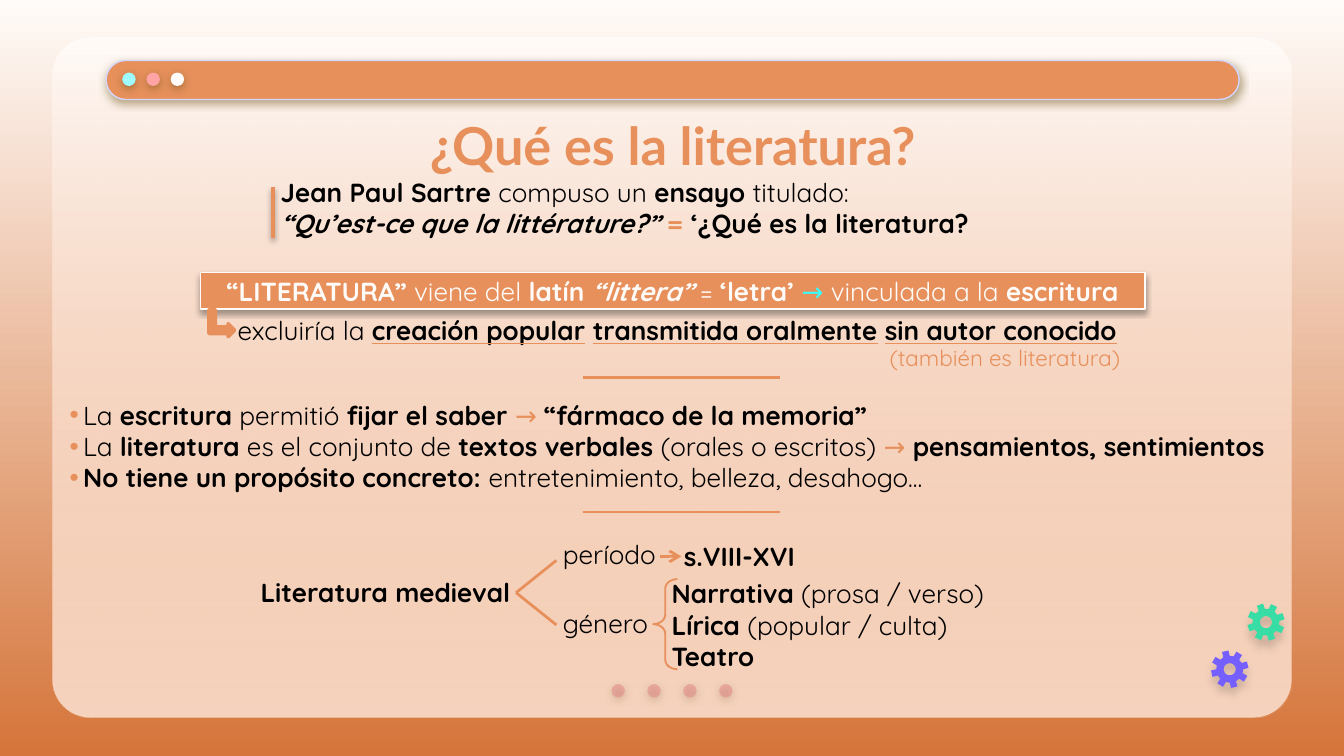
import math

import pptx
import pptx.dml.color
import pptx.enum.shapes
import pptx.enum.text
import pptx.oxml
import pptx.oxml.ns
import pptx.util
from pptx.util import Inches

COLORS = {
    "cream": "FFFBF8", "orange": "E7905C", "rust": "D5753B", "rose": "E27B83",
    "lilac": "D2D6FF", "aqua": "A0FDFD", "pink": "FFA4A4", "cyan": "3BFBFB",
    "green": "37DDA5", "violet": "755FFF", "black": "000000", "brown": "6D5416",
}
RGB = {name: pptx.dml.color.RGBColor.from_string(code) for name, code in COLORS.items()}
NS = 'xmlns:a="http://schemas.openxmlformats.org/drawingml/2006/main"'
SHAPE = pptx.enum.shapes.MSO_SHAPE
STRAIGHT = pptx.enum.shapes.MSO_CONNECTOR.STRAIGHT
MIDDLE = pptx.enum.text.MSO_ANCHOR.MIDDLE
FIT = pptx.enum.text.MSO_AUTO_SIZE.SHAPE_TO_FIT_TEXT
CENTER = pptx.enum.text.PP_ALIGN.CENTER
SOFT = ("brown", 50, 4.5, 1.5)


def style(item, fill=None, line=None, width=0.75, shadow=None):
    if fill:
        item.fill.solid()
        item.fill.fore_color.rgb = RGB[fill]
    elif hasattr(item, "fill"):
        item.fill.background()
    if line:
        item.line.color.rgb = RGB[line]
        item.line.width = pptx.util.Pt(width)
    else:
        item.line.fill.background()
    outer = ""
    if shadow:
        color, alpha, blur, distance = shadow
        outer = (
            f'<a:outerShdw blurRad="{pptx.util.Pt(blur)}" dist="{pptx.util.Pt(distance)}" dir="5400000" '
            f'algn="bl" rotWithShape="0"><a:srgbClr val="{COLORS[color]}">'
            f'<a:alpha val="{alpha * 1000}"/></a:srgbClr></a:outerShdw>'
        )
    item._element.spPr.append(pptx.oxml.parse_xml(f"<a:effectLst {NS}>{outer}</a:effectLst>"))
    return item


def write(frame, lines, color="black", size=14, family="Quicksand", align=None, bullets=False):
    for number, runs in enumerate(lines):
        paragraph = frame.paragraphs[0] if number == 0 else frame.add_paragraph()
        paragraph.alignment = align
        if bullets:
            properties = paragraph._p.get_or_add_pPr()
            properties.set("marL", str(Inches(0.1)))
            properties.set("indent", str(-Inches(0.1)))
            for mark in (f'<a:buClr {NS}><a:srgbClr val="{COLORS["orange"]}"/></a:buClr>',
                         f'<a:buFont {NS} typeface="Arial"/>', f'<a:buChar {NS} char="•"/>'):
                properties.append(pptx.oxml.parse_xml(mark))
        for words, flags, *accent in runs:
            if words == "\n":
                paragraph.add_line_break()
                paragraph._p[-1].append(pptx.oxml.parse_xml(f'<a:rPr {NS} sz="{size * 100}"/>'))
                continue
            run = paragraph.add_run()
            run.text = words
            formats = {"size": pptx.util.Pt(size), "name": family, "bold": "b" in flags,
                       "italic": "i" in flags, "underline": "u" in flags}
            for key, value in formats.items():
                setattr(run.font, key, value)
            run.font.color.rgb = RGB[accent[0] if accent else color]
            if "u" in flags:
                underline = pptx.oxml.parse_xml(
                    f'<a:uFill {NS}><a:solidFill><a:srgbClr val="{COLORS["orange"]}"/></a:solidFill></a:uFill>')
                run._r.rPr.find(pptx.oxml.ns.qn("a:latin")).addprevious(underline)


deck = pptx.Presentation()
deck.slide_width, deck.slide_height = Inches(10), Inches(10) * 9 // 16
slide = deck.slides.add_slide(deck.slide_layouts[6])
shapes = slide.shapes

panel_area = [Inches(v) for v in (0.39, 0.28, 9.22, 5.06)]
panel_base, panel_tint = [
    style(shapes.add_shape(SHAPE.ROUNDED_RECTANGLE, *panel_area), "cream") for _ in range(2)]
for panel in (panel_base, panel_tint):
    panel.adjustments[0] = 0.056

for fill, end_color in ((slide.background.fill, "rust"), (panel_tint.fill, "orange")):
    fill.gradient()
    fill.gradient_angle = 270
    for stop, color, position in zip(fill.gradient_stops, ("cream", end_color), (0, 1)):
        stop.color.rgb = RGB[color]
        stop.position = position

window_bar = shapes.add_shape(
    SHAPE.ROUNDED_RECTANGLE, Inches(0.79), Inches(0.45), Inches(8.43), Inches(0.29))
window_bar.adjustments[0] = 0.5
style(window_bar, "orange", "lilac", shadow=SOFT)

dots = [(0.91 + 0.18 * i, 0.54, color) for i, color in enumerate(("aqua", "pink", "cream"))]
dots += [(4.55 + 0.267 * i, 5.09, "rose") for i in range(4)]
translucent = [(panel_tint._element.spPr.findall(".//" + pptx.oxml.ns.qn("a:srgbClr"))[1], 37)]
for left, top, color in dots:
    dot = shapes.add_shape(SHAPE.OVAL, Inches(left), Inches(top), Inches(0.1), Inches(0.1))
    style(dot, color, shadow=SOFT)
    if color == "rose":
        translucent.append((dot._element.spPr.find(".//" + pptx.oxml.ns.qn("a:srgbClr")), 44))
for color_node, alpha in translucent:
    color_node.append(pptx.oxml.parse_xml(f'<a:alpha {NS} val="{alpha * 1000}"/>'))

title = shapes.add_textbox(Inches(0.79), Inches(0.76), Inches(8.43), Inches(0.63)).text_frame
title.word_wrap = True
title.vertical_anchor = MIDDLE
title.margin_top = title.margin_bottom = Inches(0.1)
write(title, [[("¿Qué es la literatura?", "b")]], "orange", 28, "Lato", CENTER)

for center_x, center_y, turn, color, drop in ((9.42, 4.63, -19, "green", 4.5), (9.15, 4.98, -14, "violet", 3.8)):
    teeth = [(radius, turn + 45 * tooth + offset) for tooth in range(8)
             for radius, offset in ((0.1, -14), (0.14, -10), (0.14, 10), (0.1, 14))]
    hole = [(0.045, -15 * step) for step in range(24)]
    rim, bore = [
        [(Inches(center_x + radius * math.sin(math.radians(angle))),
          Inches(center_y - radius * math.cos(math.radians(angle)))) for radius, angle in outline]
        for outline in (teeth, hole)]
    gear = shapes.build_freeform(*rim[0])
    gear.add_line_segments(rim[1:], close=True)
    gear.move_to(*bore[0])
    gear.add_line_segments(bore[1:], close=True)
    style(gear.convert_to_shape(), color, shadow=("black", 16, 4.5, drop))

etymology = shapes.add_shape(SHAPE.RECTANGLE, Inches(1.49), Inches(2.03), Inches(7.03), Inches(0.27))
style(etymology, "orange", "cream", shadow=("black", 35, 3.1, 1.8))
etymology.text_frame.vertical_anchor = MIDDLE
write(etymology.text_frame, [[
    ("“LITERATURA”", "b"), (" viene del ", ""), ("latín ", "b"), ("“littera”", "bi"), (" = ", ""),
    ("‘letra’ ", "b"), ("→", "", "cyan"), (" vinculada a la ", ""), ("escritura", "b"),
]], "cream", align=CENTER)

exclusion_arrow = shapes.add_shape(SHAPE.BENT_UP_ARROW, Inches(1.55), Inches(2.31), Inches(0.2), Inches(0.19))
exclusion_arrow.rotation = 90
style(exclusion_arrow, "orange", "orange", 2)

genre_brace = shapes.add_shape(SHAPE.LEFT_BRACE, Inches(4.86), Inches(4.31), Inches(0.18), Inches(0.67))
genre_brace.adjustments[0] = 0.385
style(genre_brace, line="orange", width=1)

passages = [
    ((1.99, 1.26, 5.74, 0.57), True, {}, [
        [("Jean Paul Sartre", "b"), (" compuso un ", ""), ("ensayo", "b"), (" titulado:", ""), ("\n", ""),
         ("“Qu’est-ce que la littérature?” ", "bi"), ("=", "b", "orange"), (" ‘¿Qué es la literatura?", "b")]]),
    ((1.67, 2.29, 7.03, 0.34), True, {}, [
        [("excluiría la ", ""), ("creación popular", "bu"), (" ", "b"), ("transmitida oralmente", "bu"),
         (" ", ""), ("sin autor conocido", "bu")]]),
    ((6.52, 2.51, 1.95, 0.3), True, {"color": "orange", "size": 12}, [[("(también es literatura)", "")]]),
    ((0.42, 2.92, 9.54, 0.81), True, {"bullets": True}, [
        [("La ", ""), ("escritura", "b"), (" permitió ", ""), ("fijar el saber ", "b"), ("→ ", "", "orange"),
         ("“fármaco de la memoria”", "b")],
        [("La ", ""), ("literatura", "b"), (" es el conjunto de ", ""), ("textos verbales", "b"),
         (" (orales o escritos) ", ""), ("→ ", "", "orange"), ("pensamientos, sentimientos", "b")],
        [("No tiene un propósito concreto:", "b"), (" entretenimiento, belleza, desahogo...", "")]]),
    ((1.84, 4.24, 2.09, 0.34), False, {}, [[("Literatura medieval", "b")]]),
    ((4.09, 3.96, 0.94, 0.34), False, {}, [[("período", "")]]),
    ((4.09, 4.47, 0.85, 0.34), False, {}, [[("género", "")]]),
    ((4.99, 3.97, 1.03, 0.34), False, {}, [[("s.VIII-XVI", "b")]]),
    ((4.9, 4.25, 2.56, 0.81), False, {}, [
        [("Narrativa", "b"), (" (prosa / verso)", "")],
        [("Lírica ", "b"), ("(popular / culta)", "")],
        [("Teatro", "b")]]),
]
for area, wraps, look, lines in passages:
    frame = shapes.add_textbox(*[Inches(v) for v in area]).text_frame
    frame.word_wrap = wraps
    frame.auto_size = FIT
    write(frame, lines, **look)

strokes = [
    ((2.03, 1.39, 2.03, 1.77), 2, ("black", 38, 3.1, 1.6)),
    ((4.34, 2.81, 5.8, 2.81), 1.5, None),
    ((4.34, 3.81, 5.8, 3.81), 1.5, None),
    ((3.84, 4.41, 4.14, 4.17), 1.5, None),
    ((3.84, 4.41, 4.14, 4.65), 1.5, None),
    ((4.91, 4.14, 5.07, 4.14), 1.5, None),
]
for ends, width, shadow in strokes:
    stroke = shapes.add_connector(STRAIGHT, *[Inches(v) for v in ends])
    style(stroke, line="orange", width=width, shadow=shadow)
period_arrow = stroke
period_arrow.line._get_or_add_ln().append(pptx.oxml.parse_xml(f'<a:tailEnd {NS} type="arrow"/>'))

deck.save("out.pptx")
